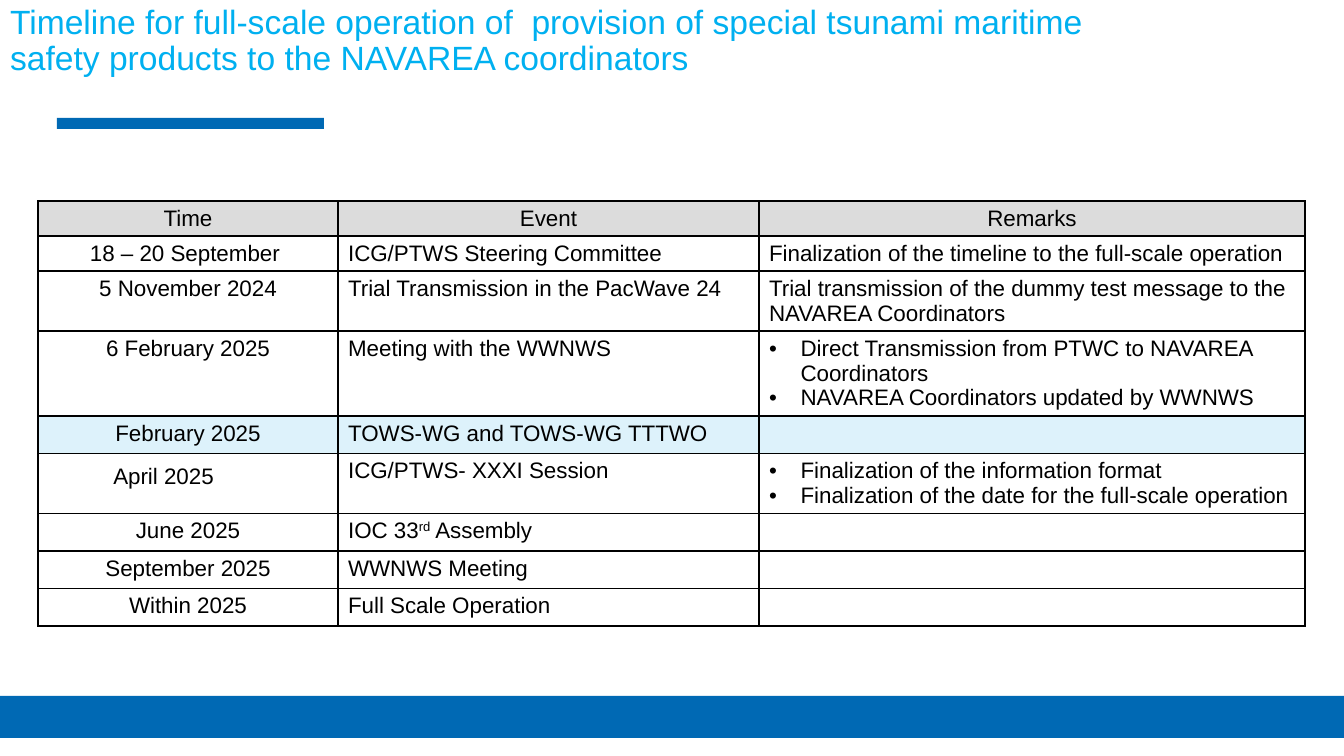
import pptx
import pptx.util
import pptx.dml.color
import pptx.enum.shapes
import pptx.enum.text
import pptx.oxml.ns
from lxml import etree

RGBColor = pptx.dml.color.RGBColor
PP_ALIGN = pptx.enum.text.PP_ALIGN
ANCHOR = pptx.enum.text.MSO_ANCHOR
qn = pptx.oxml.ns.qn

BLUE = RGBColor(0x00, 0x69, 0xB4)
SKY = RGBColor(0x00, 0xB0, 0xF0)
BLACK = RGBColor(0, 0, 0)
WHITE = RGBColor(0xFF, 0xFF, 0xFF)
GREY = RGBColor(0xDC, 0xDC, 0xDC)
PALE = RGBColor(0xDD, 0xF2, 0xFB)

FONT = "Arial"
BODY_SIZE = 16
EMU_PER_PX = 914400 / 100.8

TITLE = ("Timeline for full-scale operation of  provision of special tsunami "
         "maritime safety products to the NAVAREA coordinators")
COLUMNS = [300, 421, 546]
LINE_HEIGHT, ROW_PADDING = 25, 10
HEADER = ["Time", "Event", "Remarks"]
HIGHLIGHT = "February 2025"
SHIFTED = "April 2025"

# Time, event, remarks, lines of text in the row; a list is bulleted
EVENTS = [
    ("18 – 20 September ", "ICG/PTWS Steering Committee",
     "Finalization of the timeline to the full-scale operation", 1),
    ("5 November 2024", "Trial Transmission in the PacWave 24",
     "Trial transmission of the dummy test message to the NAVAREA Coordinators", 2),
    ("6 February 2025", "Meeting with the WWNWS",
     ["Direct Transmission from PTWC to NAVAREA Coordinators",
      "NAVAREA Coordinators updated by WWNWS"], 3),
    ("February 2025", "TOWS-WG and TOWS-WG TTTWO", "", 1),
    ("April 2025", "ICG/PTWS- XXXI Session",
     ["Finalization of the information format",
      "Finalization of the date for the full-scale operation"], 2),
    ("June 2025", ("IOC 33", "rd", " Assembly"), "", 1),
    ("September 2025", "WWNWS Meeting", "", 1),
    ("Within 2025", "Full Scale Operation", "", 1),
]


def px(n):
    return pptx.util.Emu(round(n * EMU_PER_PX))


def add_text(p, text, size=BODY_SIZE, color=BLACK, superscript=False):
    r = p.add_run()
    r.text = text
    r.font.name = FONT
    r.font.size = pptx.util.Pt(size)
    r.font.color.rgb = color
    if superscript:
        r._r.get_or_add_rPr().set("baseline", "30000")


def add_bar(slide, left, top, width, height):
    sp = slide.shapes.add_shape(pptx.enum.shapes.MSO_SHAPE.RECTANGLE,
                                px(left), px(top), px(width), px(height))
    sp.shadow.inherit = False
    sp.fill.solid()
    sp.fill.fore_color.rgb = BLUE
    sp.line.fill.background()


def set_title(slide, text):
    sp = slide.shapes.title
    sp.left, sp.top, sp.width, sp.height = px(0), px(0), px(1116), px(118)
    tf = sp.text_frame
    tf.word_wrap = True
    tf.auto_size = pptx.enum.text.MSO_AUTO_SIZE.NONE
    tf.vertical_anchor = ANCHOR.TOP
    p = tf.paragraphs[0]
    p.alignment = PP_ALIGN.LEFT
    p.line_spacing = 0.9
    add_text(p, text, size=24, color=SKY)


def set_bullet(p):
    pPr = p._p.get_or_add_pPr()
    pPr.set("marL", str(px(31.5)))
    pPr.set("indent", str(-px(31.5)))
    etree.SubElement(pPr, qn("a:buFont"), typeface=FONT)
    etree.SubElement(pPr, qn("a:buChar"), char="•")


def format_cell(cell, color):
    tcPr = cell._tc.get_or_add_tcPr()
    for side in ("a:lnL", "a:lnR", "a:lnT", "a:lnB"):
        ln = etree.SubElement(tcPr, qn(side), w=str(pptx.util.Pt(1)))
        fill = etree.SubElement(ln, qn("a:solidFill"))
        etree.SubElement(fill, qn("a:srgbClr"), val=str(BLACK))
    cell.fill.solid()
    cell.fill.fore_color.rgb = color


def fill_cell(cell, content, centered=False):
    tf = cell.text_frame
    items = content if isinstance(content, list) else [content]
    for i, item in enumerate(items):
        p = tf.paragraphs[0] if i == 0 else tf.add_paragraph()
        if centered:
            p.alignment = PP_ALIGN.CENTER
        if isinstance(content, list):
            set_bullet(p)
        if isinstance(item, tuple):
            for j, part in enumerate(item):
                add_text(p, part, superscript=j == 1)
        elif item:
            add_text(p, item)
        else:
            # Keeps an empty cell at the height of one body line
            etree.SubElement(p._p, qn("a:endParaRPr"), sz=str(BODY_SIZE * 100))


def add_timeline(slide, left, top):
    heights = [LINE_HEIGHT * n + ROW_PADDING for n in [1] + [e[3] for e in EVENTS]]
    table = slide.shapes.add_table(len(heights), len(COLUMNS), px(left), px(top),
                                   px(sum(COLUMNS)), px(sum(heights))).table
    table.horz_banding = False
    table.first_row = False
    for column, width in zip(table.columns, COLUMNS):
        column.width = px(width)
    for row, height in zip(table.rows, heights):
        row.height = px(height)

    for i, values in enumerate([HEADER] + [e[:3] for e in EVENTS]):
        color = GREY if i == 0 else PALE if values[0] == HIGHLIGHT else WHITE
        for j, content in enumerate(values):
            cell = table.cell(i, j)
            format_cell(cell, color)
            fill_cell(cell, content, centered=i == 0 or j == 0)
        if values[0] == SHIFTED:
            table.cell(i, 0).margin_right = px(59)
            table.cell(i, 0).margin_top = px(11)


def main():
    prs = pptx.Presentation()
    prs.slide_width, prs.slide_height = px(1344), px(756)
    slide = prs.slides.add_slide(prs.slide_layouts[5])

    # Accent bar and footer band
    add_bar(slide, 57, 118, 267, 11)
    add_bar(slide, 0, 696, 1344, 42)

    # Title and timeline
    set_title(slide, TITLE)
    add_timeline(slide, 38, 201)

    prs.save("out.pptx")


if __name__ == "__main__":
    main()
